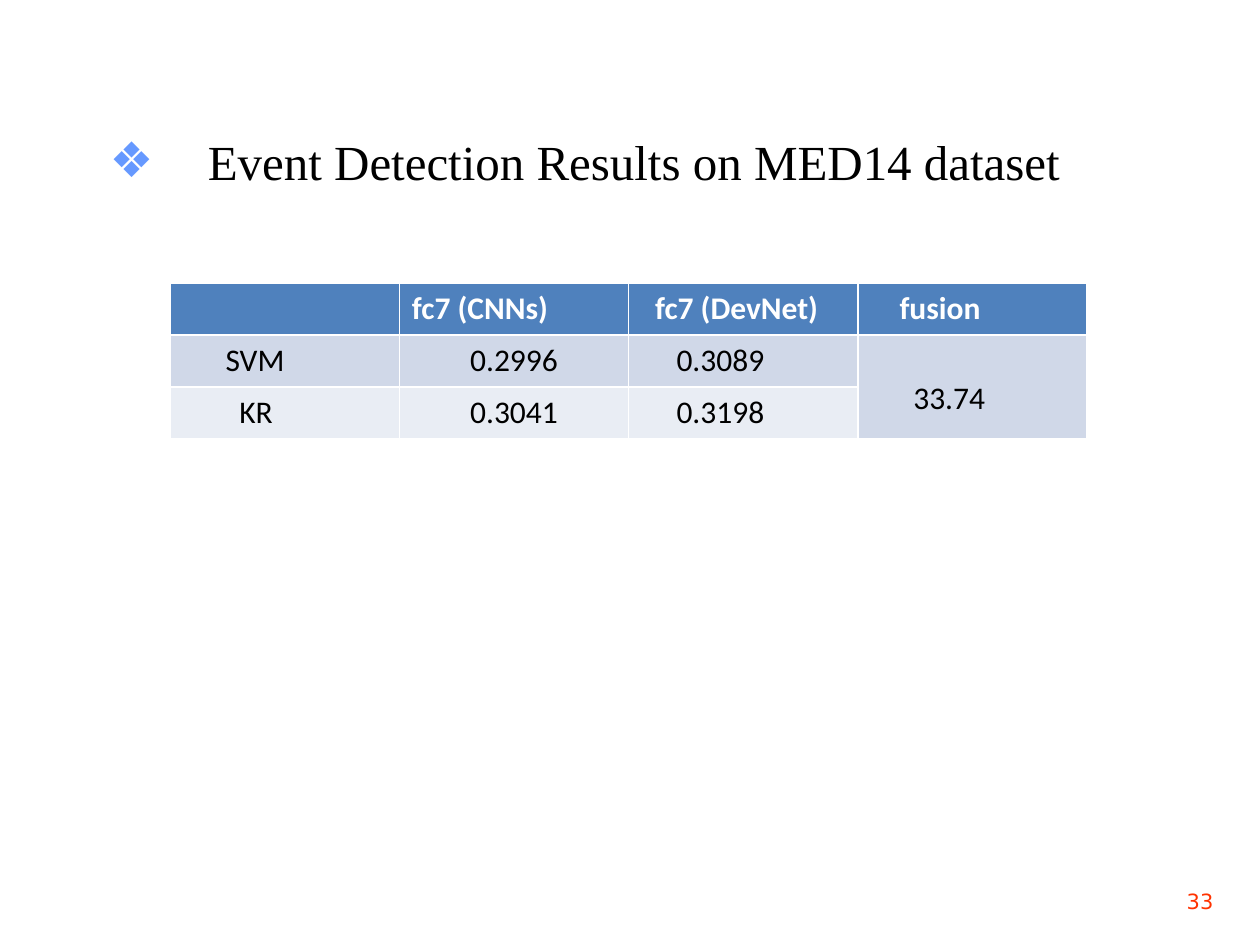
from dataclasses import dataclass

from lxml.etree import SubElement
from pptx import Presentation
from pptx.dml.color import RGBColor
from pptx.enum.text import MSO_ANCHOR, MSO_AUTO_SIZE, PP_ALIGN
from pptx.oxml.ns import qn
from pptx.util import Inches, Pt


@dataclass(frozen=True)
class Theme:
    serif: str = "Times New Roman"
    sans: str = "Calibri"
    mono: str = "DejaVu Sans"
    big: int = 28
    body: int = 18
    small: int = 12
    black: str = "000000"
    white: str = "FFFFFF"
    red: str = "FF3300"
    bullet: str = "6699FF"
    bands: tuple = ("4F81BD", "D0D8E8", "E9EDF4")


THEME = Theme()
TITLE = "Event Detection Results on MED14 dataset"
PAGE = "33"
MID = None  # centred instead of indented

# Each cell: text, indent in inches
ROWS = [
    [("", 0), ("fc7 (CNNs)", 0), ("fc7 (DevNet)", 0.11), ("fusion", 0.23)],
    [("SVM", 0.34), ("0.2996", MID), ("0.3089", 0.28), ("33.74", 0.34)],
    [("KR", 0.45), ("0.3041", MID), ("0.3198", 0.28), ("", 0)],
]
LEFT, TOP, COL, ROW = 1.35, 2.25, 1.82, 0.41
PAD = 0.1
DROP = 0.35  # top margin that sets the merged value one line lower


def style(para, face, size, color, bold=False):
    font = para.font
    font.name, font.size, font.bold = face, Pt(size), bold
    font.color.rgb = RGBColor.from_string(color)


def add_bullet(para, char, color, left, hang):
    props = para._p.get_or_add_pPr()
    props.set("marL", str(Inches(left)))
    props.set("indent", str(-Inches(hang)))
    tint = SubElement(props, qn("a:buClr"))
    SubElement(tint, qn("a:srgbClr"), val=color)
    SubElement(props, qn("a:buFont"), typeface=THEME.mono)
    SubElement(props, qn("a:buChar"), char=char)


def add_title(slide):
    title = slide.shapes.title
    title.left, title.top = Inches(0.27), Inches(0.99)
    title.width, title.height = Inches(9.45), Inches(0.7)
    frame = title.text_frame
    frame.text = TITLE
    frame.auto_size = MSO_AUTO_SIZE.NONE
    frame.vertical_anchor = MSO_ANCHOR.TOP
    para = frame.paragraphs[0]
    para.alignment = PP_ALIGN.LEFT
    para.space_before = Pt(THEME.big * 0.2)
    add_bullet(para, "❖", THEME.bullet, 1.28, 0.78)
    style(para, THEME.serif, THEME.big, THEME.black)


def add_results(slide):
    rows, cols = len(ROWS), len(ROWS[0])
    table = slide.shapes.add_table(
        rows, cols, Inches(LEFT), Inches(TOP),
        Inches(COL * cols), Inches(ROW * rows)).table
    for r, line in enumerate(ROWS):
        for c, (text, indent) in enumerate(line):
            cell = table.cell(r, c)
            cell.fill.solid()
            cell.fill.fore_color.rgb = RGBColor.from_string(THEME.bands[r])
            cell.margin_left = Inches(PAD + (indent or 0))
            cell.text = text
            para = cell.text_frame.paragraphs[0]
            if indent is MID:
                para.alignment = PP_ALIGN.CENTER
            head = r == 0
            style(para, THEME.sans, THEME.body,
                  THEME.white if head else THEME.black, head)
    fusion = table.cell(1, cols - 1)
    fusion.merge(table.cell(rows - 1, cols - 1))
    fusion.margin_top = Inches(DROP)


def add_page(slide):
    box = slide.shapes.add_textbox(
        Inches(9.32), Inches(6.98), Inches(0.68), Inches(0.35))
    frame = box.text_frame
    frame.word_wrap = True
    frame.vertical_anchor = MSO_ANCHOR.MIDDLE
    frame.text = PAGE
    style(frame.paragraphs[0], THEME.mono, THEME.small, THEME.red)


def main():
    deck = Presentation()
    deck.slide_width, deck.slide_height = Inches(10), Inches(7.5)
    slide = deck.slides.add_slide(deck.slide_layouts.get_by_name("Title Only"))
    add_title(slide)
    add_page(slide)
    add_results(slide)
    deck.save("out.pptx")


if __name__ == "__main__":
    main()
